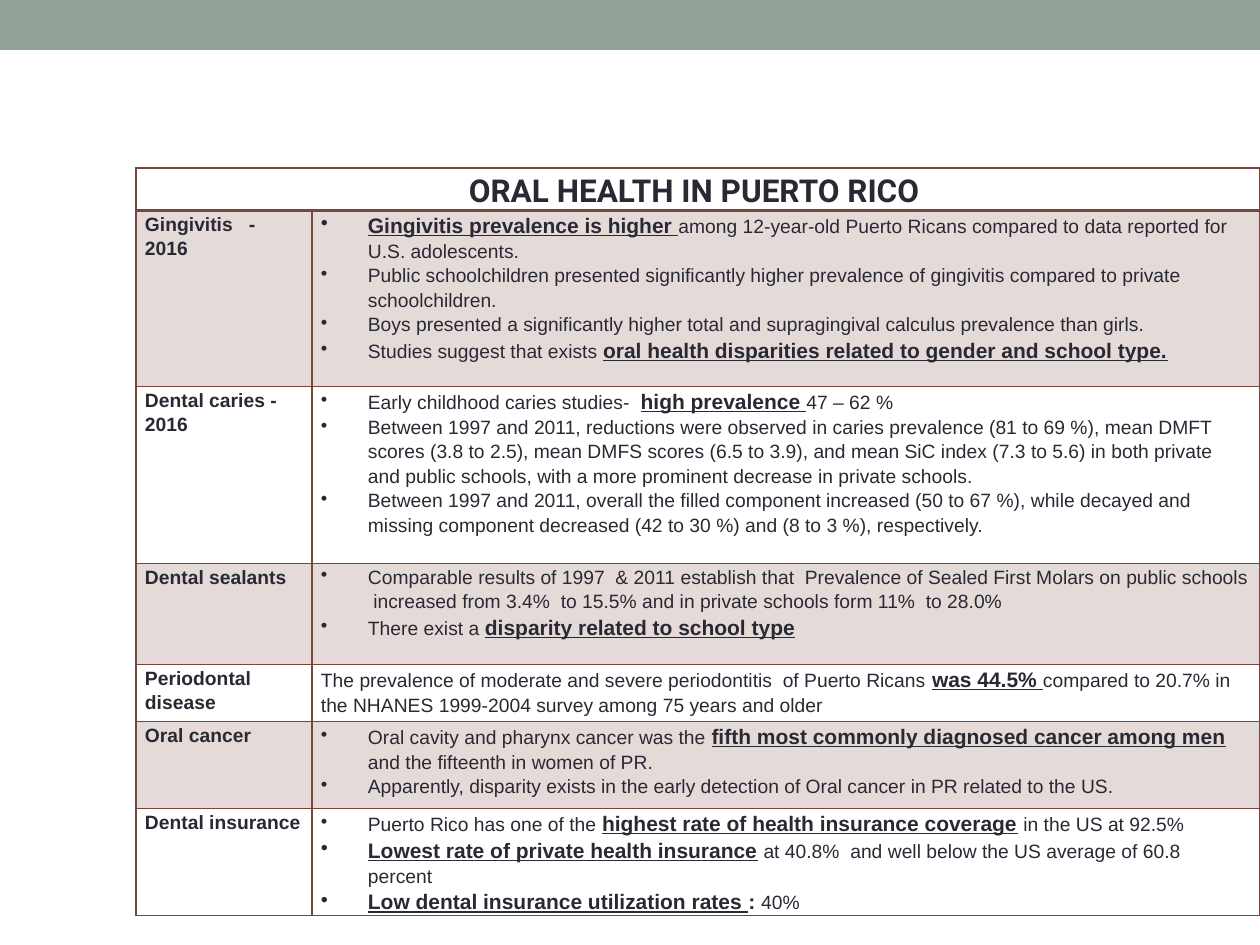
"""Build the slide with the table on oral health in Puerto Rico."""
from dataclasses import dataclass

from lxml import etree
from pptx import Presentation
from pptx import util as u
from pptx.dml.color import RGBColor
from pptx.enum import shapes, text
from pptx.oxml.ns import qn

COLORS = {"band": "93A299", "rule": "79463D", "ink": "292934"}
SCALE = 914400 / 126
COLS = (176, 948)
HEADER_H = 42


@dataclass(frozen=True)
class Run:
    text: str
    size: int = 11
    bold: bool = False
    underline: bool = False
    font: str = "Arial"


@dataclass(frozen=True)
class Topic:
    label: str
    height: int
    paragraphs: list[list[Run]]
    bulleted: bool = True


def px(n: int) -> u.Emu:
    """Turn pixels into EMU."""
    return u.Emu(round(n * SCALE))


def strong(words: str) -> Run:
    """Give a key phrase."""
    return Run(words, 12, True, True)


def bold(words: str) -> Run:
    """Give bold words of key-phrase size without underline."""
    return Run(words, 12, True)


TOPICS = [
    Topic("Gingivitis   - 2016", 176, [
        [strong("Gingivitis prevalence is higher "),
         Run("among 12-year-old Puerto Ricans compared to data reported for U.S. adolescents.")],
        [Run("Public schoolchildren presented significantly higher prevalence of gingivitis "
             "compared to private schoolchildren.")],
        [Run("Boys presented a significantly higher total and supragingival calculus "
             "prevalence than girls.")],
        [Run("Studies suggest that exists "),
         strong("oral health disparities related to gender and school type.")],
    ]),
    Topic("Dental caries - 2016", 177, [
        [Run("Early childhood caries studies-  "), strong("high prevalence "), Run("47 – 62 %")],
        [Run("Between 1997 and 2011, reductions were observed in caries prevalence (81 to 69 %), "
             "mean DMFT scores (3.8 to 2.5), mean DMFS scores (6.5 to 3.9), and mean SiC index "
             "(7.3 to 5.6) in both private and public schools, with a more prominent decrease "
             "in private schools.")],
        [Run("Between 1997 and 2011, overall the filled component increased (50 to 67 %), while "
             "decayed and missing component decreased (42 to 30 %) and (8 to 3 %), respectively.")],
    ]),
    Topic("Dental sealants", 101, [
        [Run("Comparable results of 1997  & 2011 establish that  Prevalence of Sealed First "
             "Molars on public schools  increased from 3.4%  to 15.5% and in private schools "
             "form 11%  to 28.0%")],
        [Run("There exist a "), strong("disparity related to school type")],
    ]),
    Topic("Periodontal disease", 57, [
        [Run("The prevalence of moderate and severe periodontitis  of Puerto Ricans "),
         strong("was 44.5% "),
         Run("compared to 20.7% in the NHANES 1999-2004 survey among 75 years and older")],
    ], bulleted=False),
    Topic("Oral cancer", 87, [
        [Run("Oral cavity and pharynx cancer was the "),
         strong("fifth most commonly diagnosed cancer among men "),
         Run("and the fifteenth in women of PR.")],
        [Run("Apparently, disparity exists in the early detection of Oral cancer in PR "
             "related to the US.")],
    ]),
    Topic("Dental insurance", 107, [
        [Run("Puerto Rico has one of the "), strong("highest rate of health insurance coverage"),
         bold(" "), Run("in the US at 92.5%")],
        [strong("Lowest rate of private health insurance"), bold(" "),
         Run("at 40.8%  and well below the US average of 60.8 percent")],
        [strong("Low dental insurance utilization rates "), bold(": "), Run("40%")],
    ]),
]


def add_border(cell, side: str, width: int) -> None:
    """Draw one border of a cell, with its width in points."""
    tc_pr = cell._tc.get_or_add_tcPr()
    ln = etree.SubElement(tc_pr, qn(f"a:ln{side}"), w=str(u.Pt(width)))
    fill = etree.SubElement(ln, qn("a:solidFill"))
    etree.SubElement(fill, qn("a:srgbClr"), val=COLORS["rule"])


def style_cell(cell, row: int) -> None:
    """Set margins, borders and the tint of alternate rows."""
    cell.margin_left = cell.margin_right = px(9)
    cell.margin_top = cell.margin_bottom = 0
    widths = {"L": 1, "R": 1, "T": 2 if row == 1 else 1, "B": 2 if row == 0 else 1}
    for side, width in widths.items():
        add_border(cell, side, width)
    if row % 2:
        cell.fill.solid()
        cell.fill.fore_color.rgb = RGBColor.from_string(COLORS["rule"])
        color = cell._tc.tcPr.find(qn("a:solidFill")).find(qn("a:srgbClr"))
        etree.SubElement(color, qn("a:alpha"), val="20000")
    else:
        cell.fill.background()


def write(cell, paragraphs: list[list[Run]], bulleted: bool = False, align=None) -> None:
    """Write paragraphs into a cell run by run."""
    tf = cell.text_frame
    for i, runs in enumerate(paragraphs):
        p = tf.add_paragraph() if i else tf.paragraphs[0]
        if bulleted:
            p_pr = p._p.get_or_add_pPr()
            p_pr.set("marL", str(px(47)))
            p_pr.set("indent", str(-px(47)))
            etree.SubElement(p_pr, qn("a:buChar"), char="•")
        p.line_spacing = 1.15
        p.alignment = align
        for run in runs:
            r = p.add_run()
            r.text = run.text
            r.font.name = run.font
            r.font.size = u.Pt(run.size)
            r.font.bold = run.bold
            r.font.underline = run.underline
            r.font.color.rgb = RGBColor.from_string(COLORS["ink"])


def add_band(s) -> None:
    """Draw the band along the top of the slide."""
    sp = s.shapes.add_shape(shapes.MSO_SHAPE.RECTANGLE, 0, 0, px(1260), px(50))
    sp.shadow.inherit = False
    sp.fill.solid()
    sp.fill.fore_color.rgb = RGBColor.from_string(COLORS["band"])
    sp.line.fill.background()


def add_topics(s, topics: list[Topic]) -> None:
    """Draw the table: a merged title row, then one row per topic."""
    heights = [HEADER_H] + [t.height for t in topics]
    table = s.shapes.add_table(len(heights), len(COLS), px(136), px(168),
                               px(sum(COLS)), px(sum(heights))).table
    table.first_row = table.horz_banding = False
    for column, width in zip(table.columns, COLS):
        column.width = px(width)
    for i, height in enumerate(heights):
        table.rows[i].height = px(height)
        for cell in table.rows[i].cells:
            style_cell(cell, i)
    title = table.cell(0, 0)
    title.merge(table.cell(0, 1))
    write(title, [[Run("ORAL HEALTH IN PUERTO RICO ", 18, True, font="Roboto")]],
          align=text.PP_ALIGN.CENTER)
    for i, topic in enumerate(topics, 1):
        write(table.cell(i, 0), [[Run(topic.label, bold=True)]])
        write(table.cell(i, 1), topic.paragraphs, topic.bulleted)


def main() -> None:
    """Build and save the slide."""
    prs = Presentation()
    prs.slide_width, prs.slide_height = px(1260), px(945)
    s = prs.slides.add_slide(prs.slide_layouts[6])
    add_band(s)
    add_topics(s, TOPICS)
    prs.save("out.pptx")


if __name__ == "__main__":
    main()
